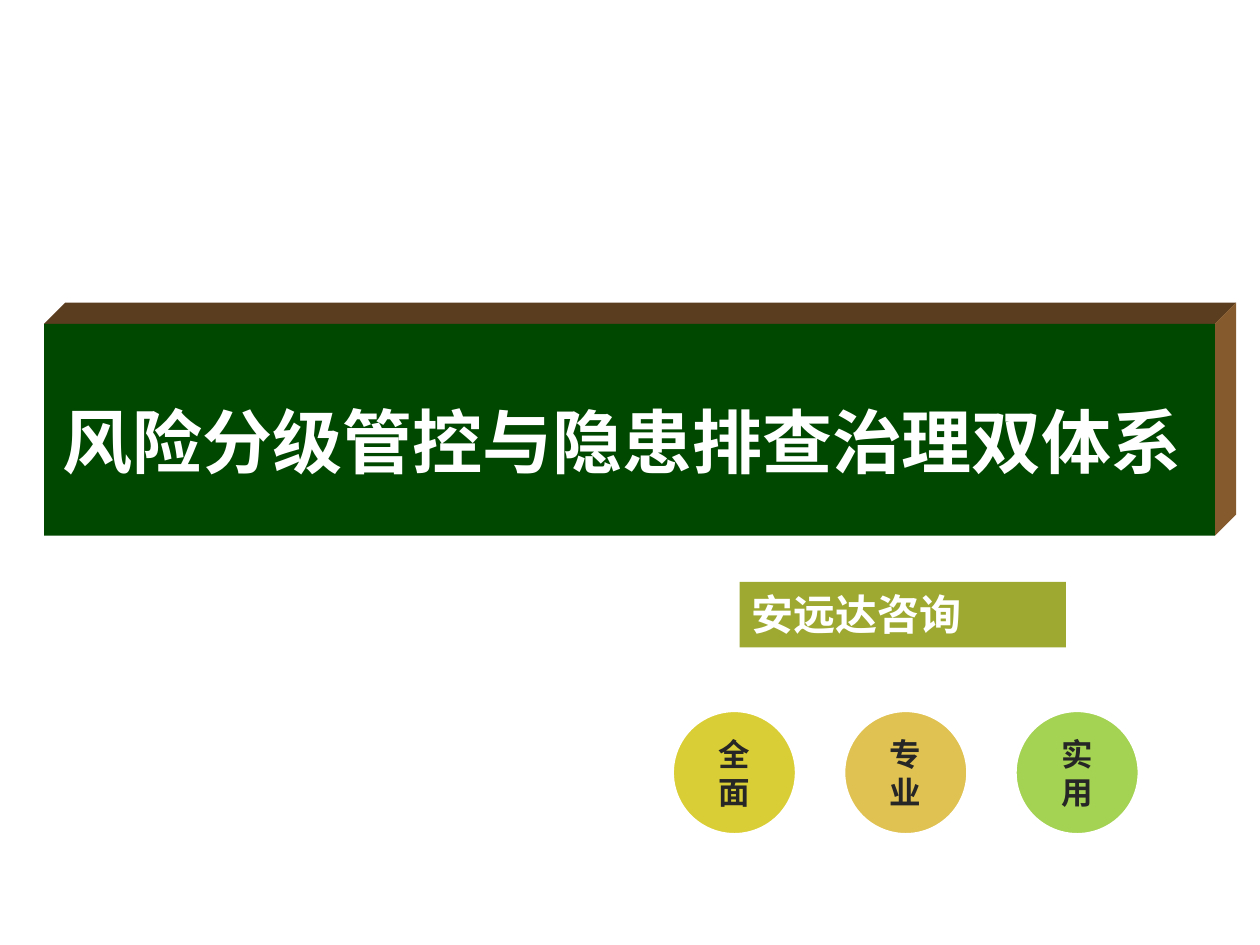
from dataclasses import dataclass

from lxml.etree import SubElement
from pptx import Presentation
from pptx.dml.color import RGBColor
from pptx.enum.shapes import MSO_SHAPE
from pptx.enum.text import MSO_ANCHOR, PP_ALIGN
from pptx.oxml.ns import qn
from pptx.util import Cm, Pt


@dataclass(frozen=True)
class Theme:
    """Colours, fonts and type sizes of the cover."""
    banner: str = "004800"
    banner_top: str = "5A3C1E"
    banner_side: str = "855A2D"
    label: str = "9EA932"
    white: str = "FFFFFF"
    dark: str = "262626"
    cjk: str = "Noto Sans CJK SC"
    latin: str = "Arial"
    title_size: int = 40
    title_end_size: int = 36
    label_size: int = 24
    value_size: int = 18


THEME = Theme()
VALUES = [("全面", "DACE36"), ("专业", "E0C252"), ("实用", "A4D252")]


def paint(shape, color):
    """Give a shape a flat fill without line or shadow."""
    shape.shadow.inherit = False
    shape.fill.solid()
    shape.fill.fore_color.rgb = RGBColor.from_string(color)
    shape.line.fill.background()


def add_block(slide, kind, box, color, anchor):
    """Add a filled preset shape that holds wrapped text."""
    block = slide.shapes.add_shape(kind, *(Cm(length) for length in box))
    paint(block, color)
    block.text_frame.word_wrap = True
    block.text_frame.vertical_anchor = anchor
    return block


def add_run(paragraph, text, size, color, font):
    """Append a bold run with its Latin and East Asian fonts."""
    run = paragraph.add_run()
    run.text = text
    run.font.size = Pt(size)
    run.font.bold = True
    run.font.color.rgb = RGBColor.from_string(color)
    run.font.name = font
    SubElement(run.font._element, qn("a:ea")).set("typeface", THEME.cjk)


def add_face(slide, corners, color):
    """Add one slanted face of the banner."""
    start, *others = [(Cm(x), Cm(y)) for x, y in corners]
    outline = slide.shapes.build_freeform(*start)
    outline.add_line_segments(others, close=True)
    paint(outline.convert_to_shape(), color)


def add_banner(slide, box, depth):
    """Draw the title banner as a solid block seen from the upper right."""
    left, top, width, height = box
    right, bottom = left + width, top + height
    back_right, back_top = right + depth, top - depth
    add_face(slide, [(left, top), (left + depth, back_top),
                     (back_right, back_top), (right, top)], THEME.banner_top)
    add_face(slide, [(right, top), (back_right, back_top),
                     (back_right, bottom - depth), (right, bottom)], THEME.banner_side)
    front = add_block(slide, MSO_SHAPE.RECTANGLE, box, THEME.banner, MSO_ANCHOR.MIDDLE)
    title = front.text_frame.paragraphs[0]
    title.alignment = PP_ALIGN.CENTER
    title.line_spacing = 1.25
    add_run(title, "风险分级管控与隐患排查治理双体系", THEME.title_size, THEME.white, THEME.cjk)
    add_run(title, " ", THEME.title_end_size, THEME.white, THEME.cjk)


def add_label(slide, box):
    """Draw the bar with the name of the consultancy."""
    bar = add_block(slide, MSO_SHAPE.RECTANGLE, box, THEME.label, MSO_ANCHOR.TOP)
    consultancy = bar.text_frame.paragraphs[0]
    consultancy.alignment = PP_ALIGN.JUSTIFY
    add_run(consultancy, "安远达咨询", THEME.label_size, THEME.white, THEME.cjk)


def add_values(slide, box):
    """Spread one circle per value evenly across the box."""
    left, top, width, diameter = box
    pitch = (width - diameter) / (len(VALUES) - 1)
    for index, (value, color) in enumerate(VALUES):
        circle = add_block(slide, MSO_SHAPE.OVAL,
                           (left + index * pitch, top, diameter, diameter),
                           color, MSO_ANCHOR.MIDDLE)
        circle.line.color.rgb = RGBColor.from_string(THEME.white)
        circle.line.width = Pt(1.5)
        circle.text_frame.margin_left = circle.text_frame.margin_right = Cm(0.3)
        caption = circle.text_frame.paragraphs[0]
        caption.alignment = PP_ALIGN.CENTER
        add_run(caption, value, THEME.value_size, THEME.dark, THEME.latin)


def main():
    """Build the cover slide and save it."""
    deck = Presentation()
    deck.slide_width, deck.slide_height = Cm(25.4), Cm(19.05)
    cover = deck.slides.add_slide(deck.slide_layouts[6])
    add_banner(cover, (0.89, 6.53, 23.6, 4.27), 0.43)
    add_label(cover, (14.91, 11.73, 6.58, 1.32))
    add_values(cover, (13.56, 14.33, 9.4, 2.49))
    deck.save("out.pptx")


if __name__ == "__main__":
    main()
